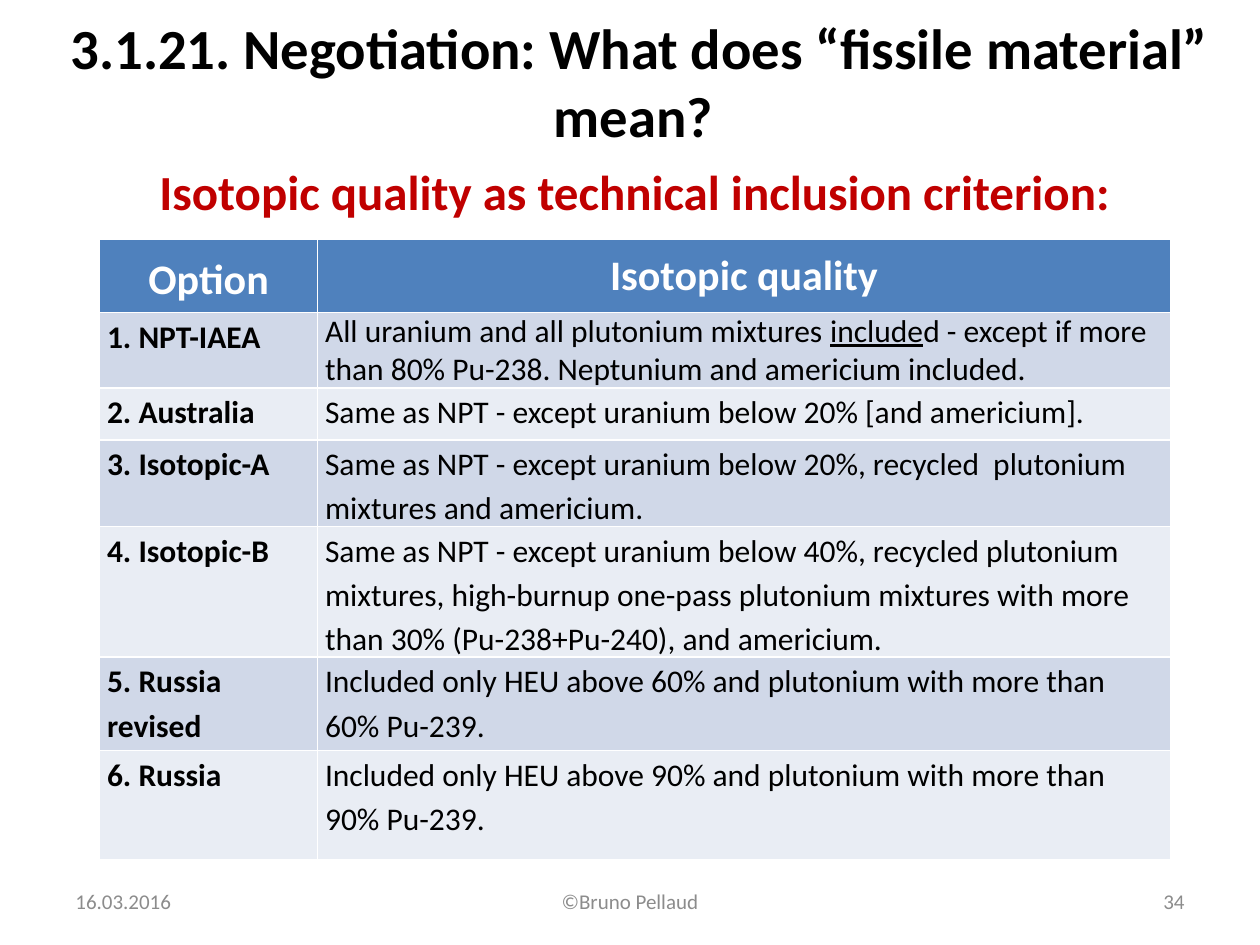
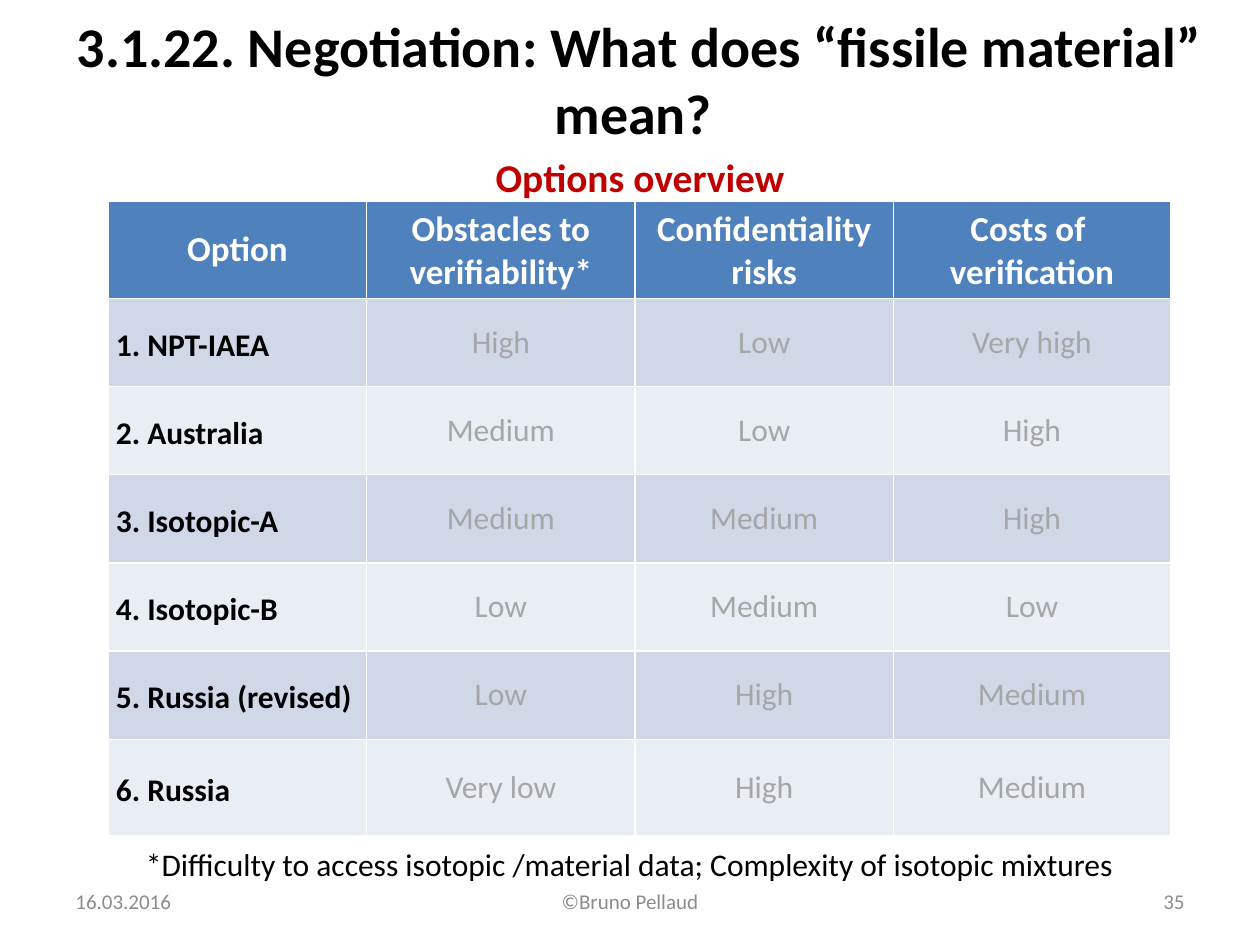
"""Build two slides on the options for defining fissile material in negotiations."""
from dataclasses import dataclass

from pptx import Presentation
from pptx import util as u
from pptx.dml.color import RGBColor
from pptx.enum import text as t


@dataclass(frozen=True)
class Theme:
    font: str = "Calibri"
    black: str = "000000"
    white: str = "FFFFFF"
    red: str = "C00000"
    footer_grey: str = "8C8C8C"
    value_grey: str = "A6A6A6"
    header_fill: str = "4F81BD"
    bands: tuple = ("D0D8E8", "E9EDF4")
    body_size: float = 18
    footer_size: float = 12


theme = Theme()
LEFT, CENTER, RIGHT = t.PP_ALIGN.LEFT, t.PP_ALIGN.CENTER, t.PP_ALIGN.RIGHT
TOP, MIDDLE = t.MSO_ANCHOR.TOP, t.MSO_ANCHOR.MIDDLE


def write(frame, content, size, color, bold=False, align=LEFT, spacing=1.0):
    """Fill a text frame; line feeds part paragraphs, underscores enclose underlined words."""
    for number, line in enumerate(content.split("\n")):
        para = frame.add_paragraph() if number else frame.paragraphs[0]
        para.alignment = align
        para.line_spacing = spacing
        para.font.name = theme.font
        para.font.size = u.Pt(size)
        para.font.bold = bold
        para.font.color.rgb = RGBColor.from_string(color)
        for index, words in enumerate(line.split("_")):
            span = para.add_run()
            span.text = words
            if index % 2:
                span.font.underline = True


def add_text(page, bounds, content, size, color, anchor=MIDDLE, **style):
    """Add a wrapped text box."""
    box = page.shapes.add_textbox(*map(u.Pt, bounds))
    box.text_frame.word_wrap = True
    box.text_frame.vertical_anchor = anchor
    write(box.text_frame, content, size, color, **style)


quality_page = dict(
    title="3.1.21. Negotiation: What does “fissile material” mean? ",
    title_top=7, title_size=32.4,
    subtitle="Isotopic quality as technical inclusion criterion:",
    subtitle_bounds=(76.3, 88.6, 572.4, 41), subtitle_size=28,
    table_origin=(56.9, 136.8),
    columns=(124.6, 487.4),
    heights=(41.8, 41.8, 29.5, 49, 71.3, 53.3, 62.6),
    header_size=24, option_header_spacing=1.15,
    option_anchor=TOP,
    value_style=dict(color=theme.black, align=LEFT, spacing=1.15),
    rows=(
        ("Option", "Isotopic quality"),
        ("1. NPT-IAEA", "All uranium and all plutonium mixtures _include_d - except if more "
                        "than 80% Pu-238. Neptunium and americium included."),
        ("2. Australia", "Same as NPT - except uranium below 20% [and americium]."),
        ("3. Isotopic-A", "Same as NPT - except uranium below 20%, recycled  plutonium "
                          "mixtures and americium."),
        ("4. Isotopic-B", "Same as NPT - except uranium below 40%, recycled plutonium "
                          "mixtures, high-burnup one-pass plutonium mixtures with more "
                          "than 30% (Pu-238+Pu-240), and americium."),
        ("5. Russia revised", "Included only HEU above 60% and plutonium with more than "
                              "60% Pu-239."),
        ("6. Russia", "Included only HEU above 90% and plutonium with more than "
                      "90% Pu-239."),
    ),
    single_spaced_row=1,
    footnote=None,
)
overview_page = dict(
    title="3.1.22. Negotiation: What does “fissile material” mean? ",
    title_top=6, title_size=32,
    subtitle="Options overview",
    subtitle_bounds=(41.8, 84.2, 648, 33.1), subtitle_size=22.5,
    table_origin=(61.9, 115.2),
    columns=(147.6, 153.4, 147.6, 158.4),
    heights=(50.4,) * 6 + (55.4,),
    header_size=20, option_header_spacing=1.0,
    option_anchor=MIDDLE,
    value_style=dict(color=theme.value_grey, align=CENTER),
    rows=(
        ("Option", "Obstacles to verifiability*", "Confidentiality\nrisks",
         "Costs of \nverification"),
        ("1. NPT-IAEA", "High", "Low", "Very high"),
        ("2. Australia", "Medium", "Low", "High"),
        ("3. Isotopic-A", "Medium", "Medium", "High"),
        ("4. Isotopic-B", "Low", "Medium", "Low"),
        ("5. Russia (revised)", "Low", "High", "Medium"),
        ("6. Russia", "Very low", "High", "Medium"),
    ),
    single_spaced_row=None,
    footnote="*Difficulty to access isotopic /material data; Complexity of isotopic mixtures",
)

deck = Presentation()
deck.slide_width, deck.slide_height = u.Pt(720), u.Pt(540)
title_only = deck.slide_layouts[5]

for page_number, content in enumerate((quality_page, overview_page), start=34):
    page = deck.slides.add_slide(title_only)

    title = page.shapes.title
    title.left, title.top = u.Pt(0.5), u.Pt(content["title_top"])
    title.width, title.height = u.Pt(730), u.Pt(78)
    title.text_frame.auto_size = t.MSO_AUTO_SIZE.NONE
    title.text_frame.vertical_anchor = MIDDLE
    write(title.text_frame, content["title"], content["title_size"], theme.black,
          bold=True, align=CENTER)
    add_text(page, content["subtitle_bounds"], content["subtitle"],
             content["subtitle_size"], theme.red, bold=True, align=CENTER)

    rows, columns, heights = content["rows"], content["columns"], content["heights"]
    bounds = (*content["table_origin"], sum(columns), sum(heights))
    table = page.shapes.add_table(len(rows), len(columns), *map(u.Pt, bounds)).table
    for column, width in zip(table.columns, columns):
        column.width = u.Pt(width)
    for row_index, (row, height) in enumerate(zip(rows, heights)):
        table.rows[row_index].height = u.Pt(height)
        for column_index, words in enumerate(row):
            cell = table.cell(row_index, column_index)
            is_header, is_option = row_index == 0, column_index == 0
            fill = theme.header_fill if is_header else theme.bands[(row_index - 1) % 2]
            cell.fill.solid()
            cell.fill.fore_color.rgb = RGBColor.from_string(fill)
            cell.vertical_anchor = MIDDLE if is_header else content["option_anchor"]
            if not is_header:
                cell.margin_left = cell.margin_right = u.Pt(4.3)
                cell.margin_top = cell.margin_bottom = 0
            if is_header:
                style = dict(color=theme.white, bold=True, align=CENTER)
                if is_option:
                    style["spacing"] = content["option_header_spacing"]
            elif is_option:
                style = dict(color=theme.black, bold=True, spacing=1.15)
            else:
                style = dict(content["value_style"])
                if row_index == content["single_spaced_row"]:
                    style["spacing"] = 1.0
            size = content["header_size"] if is_header else theme.body_size
            write(cell.text_frame, words, size, **style)

    if content["footnote"]:
        add_text(page, (76.3, 479.5, 584, 28.8), content["footnote"],
                 theme.body_size, theme.black, anchor=TOP)

    for left, width, words, align in (
        (36, 168, "16.03.2016", LEFT),
        (246, 228, "©Bruno Pellaud", CENTER),
        (516, 168, str(page_number), RIGHT),
    ):
        add_text(page, (left, 500.5, width, 28.8), words,
                 theme.footer_size, theme.footer_grey, align=align)

deck.save("out.pptx")
